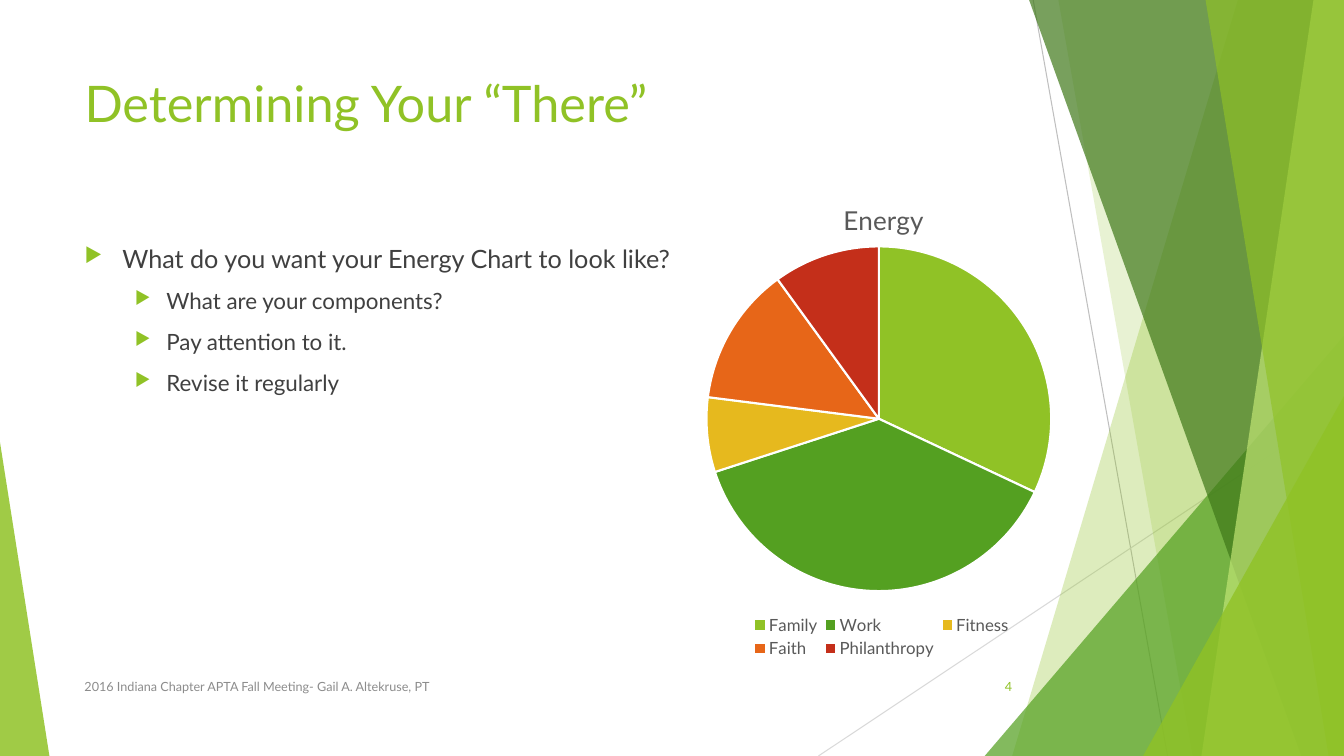
"""Build the "Determining Your There" slide with its energy pie chart."""
from lxml import etree
from pptx import Presentation
from pptx.chart.data import CategoryChartData
from pptx.dml.color import RGBColor
from pptx.enum.chart import XL_CHART_TYPE, XL_LEGEND_POSITION
from pptx.enum.shapes import MSO_CONNECTOR, MSO_SHAPE
from pptx.enum.text import MSO_ANCHOR, PP_ALIGN
from pptx.oxml.ns import qn
from pptx.util import Pt

STRAIGHT = MSO_CONNECTOR.STRAIGHT
TRIANGLE = MSO_SHAPE.ISOSCELES_TRIANGLE
PIE = XL_CHART_TYPE.PIE
BOTTOM = XL_LEGEND_POSITION.BOTTOM
TOP, MIDDLE = MSO_ANCHOR.TOP, MSO_ANCHOR.MIDDLE
LEFT, RIGHT = PP_ALIGN.LEFT, PP_ALIGN.RIGHT

FONT = "Lato"
LIME = "90C226"
GREEN = "54A021"
GRAY = "595959"
WIDTH, HEIGHT = 960, 540

color = RGBColor.from_string


def paint(shape, fill, opacity):
    """Give a shape a translucent fill with no outline or shadow."""
    shape.shadow.inherit = False
    shape.fill.solid()
    shape.fill.fore_color.rgb = color(fill)
    shape.line.fill.background()
    tone = shape.element.find(".//" + qn("a:srgbClr"))
    etree.SubElement(tone, qn("a:alpha"), val=str(opacity * 1000))


def write(frame, lines, fill, anchor=TOP, align=LEFT):
    """Fill a text frame with one paragraph per (text, size) pair."""
    frame.word_wrap = True
    frame.vertical_anchor = anchor
    for index, (text, size) in enumerate(lines):
        para = frame.add_paragraph() if index else frame.paragraphs[0]
        para.alignment = align
        span = para.add_run()
        span.text = text
        span.font.name = FONT
        span.font.size = Pt(size)
        span.font.color.rgb = color(fill)


deck = Presentation()
deck.slide_width, deck.slide_height = Pt(WIDTH), Pt(HEIGHT)
page = deck.slides.add_slide(deck.slide_layouts[6])

for x1, y1, x2, y2, tone in [
    (738, 0, 834, HEIGHT, "BFBFBF"),
    (WIDTH, 290, 584.6, HEIGHT, "D9D9D9"),
]:
    line = page.shapes.add_connector(STRAIGHT, Pt(x1), Pt(y1), Pt(x2), Pt(y2))
    line.line.color.rgb = color(tone)
    line.line.width = Pt(0.75)
    etree.SubElement(line.element.spPr, qn("a:effectLst"))

# Each facet is (kind, top-left x or left, bottom-left x or top, fill, opacity).
for kind, first, second, fill, opacity in [
    ("band", 884.2, 723, LIME, 30),
    ("band", 756, 851.8, LIME, 20),
    ("corner", 703.4, 239.8, GREEN, 72),
    ("band", 735.1, 929.5, "3F7819", 70),
    ("band", 938.2, 858.2, "C0E474", 70),
    ("band", 861.1, 949, LIME, 65),
    ("corner", 816.5, 283, LIME, 80),
]:
    if kind == "band":
        outline = page.shapes.build_freeform(Pt(first), Pt(0))
        outline.add_line_segments([
            (Pt(WIDTH), Pt(0)), (Pt(WIDTH), Pt(HEIGHT)), (Pt(second), Pt(HEIGHT)),
        ])
        facet = outline.convert_to_shape()
    else:
        facet = page.shapes.add_shape(
            TRIANGLE, Pt(first), Pt(second), Pt(WIDTH - first), Pt(HEIGHT - second))
        facet.adjustments[0] = 1
    paint(facet, fill, opacity)

wedge = page.shapes.add_shape(TRIANGLE, Pt(0), Pt(316), Pt(35.3), Pt(224))
wedge.adjustments[0] = 0
paint(wedge, LIME, 85)

title = page.shapes.add_textbox(Pt(53.3), Pt(48), Pt(677), Pt(104))
write(title.text_frame, [("Determining Your “There”", 36)], LIME)

body = page.shapes.add_textbox(Pt(53.3), Pt(170), Pt(677), Pt(305))
write(body.text_frame, [
    ("What do you want your Energy Chart to look like?", 18),
    ("What are your components?", 16),
    ("Pay attention to it.", 16),
    ("Revise it regularly", 16),
], "404040")
for index, para in enumerate(body.text_frame.paragraphs):
    para.level = 1 if index else 0
    para.space_before = Pt(10)
    margin, hanging = (58.5, 22.5) if index else (27, 27)
    props = para._p.get_or_add_pPr()
    props.set("marL", str(Pt(margin)))
    props.set("indent", str(-Pt(hanging)))
    bullet_color = etree.SubElement(props, qn("a:buClr"))
    etree.SubElement(bullet_color, qn("a:srgbClr"), val=LIME)
    etree.SubElement(props, qn("a:buSzPct"), val="80000")
    etree.SubElement(props, qn("a:buChar"), char="▶")

energy = CategoryChartData()
energy.categories = ["Family", "Work", "Fitness", "Faith", "Philanthropy"]
energy.add_series("Energy", [32, 38, 7, 13, 10])
chart = page.shapes.add_chart(
    PIE, Pt(422.6), Pt(122.4), Pt(410.4), Pt(353.5), energy).chart
chart.font.name = FONT
chart.font.size = Pt(10)
chart.font.color.rgb = color("000000")
chart.has_title = True
write(chart.chart_title.text_frame, [("Energy", 18.6)], GRAY)
chart.chart_title.text_frame.paragraphs[0].runs[0].font.bold = False
chart.has_legend = True
chart.legend.position = BOTTOM
chart.legend.include_in_layout = False
chart.legend.font.name = FONT
chart.legend.font.size = Pt(12)
chart.legend.font.color.rgb = color(GRAY)

plot = chart.plots[0]
plot.vary_by_categories = True
for index, fill in enumerate([LIME, GREEN, "E6B91E", "E76618", "C42F1A"]):
    slice_format = plot.series[0].points[index].format
    slice_format.fill.solid()
    slice_format.fill.fore_color.rgb = color(fill)
    slice_format.line.color.rgb = color("FFFFFF")
    slice_format.line.width = Pt(1.5)

for tag, place, target, bounds in [
    ("c:title", 1, None, {"x": 0.43, "y": 0.05}),
    ("c:plotArea", 0, "inner", {"x": 0.2, "y": 0.15, "w": 0.6, "h": 0.7}),
    ("c:legend", 1, None, {"x": 0.27, "y": 0.89, "w": 0.47, "h": 0.1}),
]:
    part = chart.element.find(".//" + qn(tag))
    for old in part.findall(qn("c:layout")):
        part.remove(old)
    layout = etree.Element(qn("c:layout"))
    part.insert(place, layout)
    manual = etree.SubElement(layout, qn("c:manualLayout"))
    if target:
        etree.SubElement(manual, qn("c:layoutTarget"), val=target)
    for axis in "xy":
        etree.SubElement(manual, qn(f"c:{axis}Mode"), val="edge")
    for name, share in bounds.items():
        etree.SubElement(manual, qn(f"c:{name}"), val=str(share))

for left, width, text, fill, align in [
    (53.3, 496, "2016 Indiana Chapter APTA Fall Meeting- Gail A. Altekruse, PT", "8C8C8C", LEFT),
    (676, 54, "4", LIME, RIGHT),
]:
    box = page.shapes.add_textbox(Pt(left), Pt(476), Pt(width), Pt(28.8))
    write(box.text_frame, [(text, 9)], fill, MIDDLE, align)

deck.save("out.pptx")
